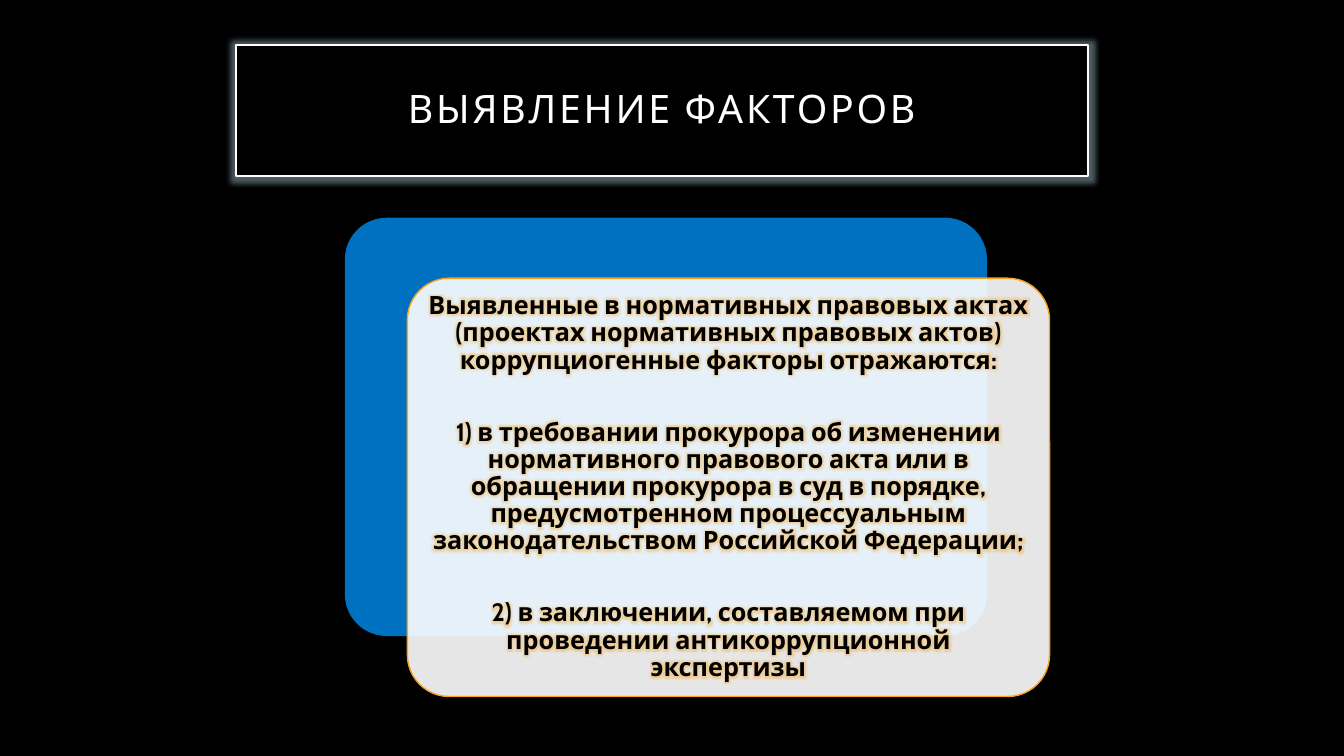
from lxml import etree
from pptx import Presentation
from pptx.dml.color import RGBColor
from pptx.enum.shapes import MSO_SHAPE as SHAPE
from pptx.enum.text import MSO_ANCHOR as ANCHOR, MSO_AUTO_SIZE as AUTO, PP_ALIGN as ALIGN
from pptx.oxml.ns import nsdecls, qn
from pptx.util import Inches, Pt

BLACK = RGBColor(0x00, 0x00, 0x00)
WHITE = RGBColor(0xFF, 0xFF, 0xFF)
BLUE = RGBColor(0x00, 0x70, 0xC0)
ORANGE = RGBColor(0xF6, 0xA2, 0x1D)
MIST = RGBColor(0xC0, 0xE0, 0xEB)
FONT = "Cabin"

SLIDE_W, SLIDE_H = 13.33, 7.5
CARD_W, CARD_H = 6.37, 4.15
CARD_X, CARD_Y = 3.42, 2.16
CARD_STEP = (0.62, 0.6)

TITLE = "ВЫЯВЛЕНИЕ ФАКТОРОВ"
FACTORS = [
    "Выявленные в нормативных правовых актах (проектах нормативных правовых актов) "
    "коррупциогенные факторы отражаются:",
    "1) в требовании прокурора об изменении нормативного правового акта или в обращении "
    "прокурора в суд в порядке, предусмотренном процессуальным законодательством "
    "Российской Федерации;",
    "2) в заключении, составляемом при проведении антикоррупционной экспертизы",
]


def glow(color, radius, alpha):
    return etree.fromstring(
        f'<a:effectLst {nsdecls("a")}><a:glow rad="{Pt(radius)}"><a:srgbClr val="{color}">'
        f'<a:alpha val="{alpha * 1000}"/></a:srgbClr></a:glow></a:effectLst>')


def set_frame(tf, inset):
    tf.word_wrap = True
    tf.auto_size = AUTO.NONE
    tf.vertical_anchor = ANCHOR.MIDDLE
    tf.margin_left = tf.margin_right = tf.margin_top = tf.margin_bottom = Inches(inset)


def add_text(p, text, size, color, bold=False):
    p.alignment = ALIGN.CENTER
    p.line_spacing = 0.9
    r = p.add_run()
    r.text = text
    r.font.name, r.font.size, r.font.bold = FONT, Pt(size), bold
    r.font.color.rgb = color
    return r


def add_title(s):
    sp = s.shapes.title
    sp.left, sp.top, sp.width, sp.height = map(Inches, (2.34, 0.45, 8.45, 1.3))
    sp.fill.solid()
    sp.fill.fore_color.rgb = BLACK
    sp.line.color.rgb = WHITE
    sp.line.width = Pt(1.5)
    sp._element.spPr.append(glow(MIST, 8, 40))
    set_frame(sp.text_frame, 0.2)
    r = add_text(sp.text_frame.paragraphs[0], TITLE, 28, WHITE)
    r._r.get_or_add_rPr().set("spc", "200")


def add_card(s, step, color, opacity=100, line=None):
    x, y = CARD_X + step * CARD_STEP[0], CARD_Y + step * CARD_STEP[1]
    sp = s.shapes.add_shape(SHAPE.ROUNDED_RECTANGLE, *map(Inches, (x, y, CARD_W, CARD_H)))
    sp.adjustments[0] = 0.1
    sp.shadow.inherit = False
    sp.fill.solid()
    sp.fill.fore_color.rgb = color
    if opacity < 100:
        clr = sp._element.spPr.find(qn("a:solidFill"))[0]
        etree.SubElement(clr, qn("a:alpha")).set("val", str(opacity * 1000))
    if line is None:
        sp.line.fill.background()
    else:
        sp.line.color.rgb = line
        sp.line.width = Pt(1)
    return sp


def add_factors(sp):
    tf = sp.text_frame
    set_frame(tf, 0.07)
    for i, text in enumerate(FACTORS):
        p = tf.add_paragraph() if i else tf.paragraphs[0]
        p.space_before = Pt(32 if i else 0)
        r = add_text(p, text, 18, BLACK, bold=True)
        r._r.rPr.find(qn("a:solidFill")).addnext(glow(ORANGE, 5, 40))


def main():
    prs = Presentation()
    prs.slide_width, prs.slide_height = Inches(SLIDE_W), Inches(SLIDE_H)
    s = prs.slides.add_slide(prs.slide_layouts[5])
    s.background.fill.solid()
    s.background.fill.fore_color.rgb = BLACK

    # Heading
    add_title(s)

    # Stacked cards, the front one carrying the text
    add_card(s, 0, BLUE)
    add_factors(add_card(s, 1, WHITE, opacity=90, line=ORANGE))

    prs.save("out.pptx")


if __name__ == "__main__":
    main()
